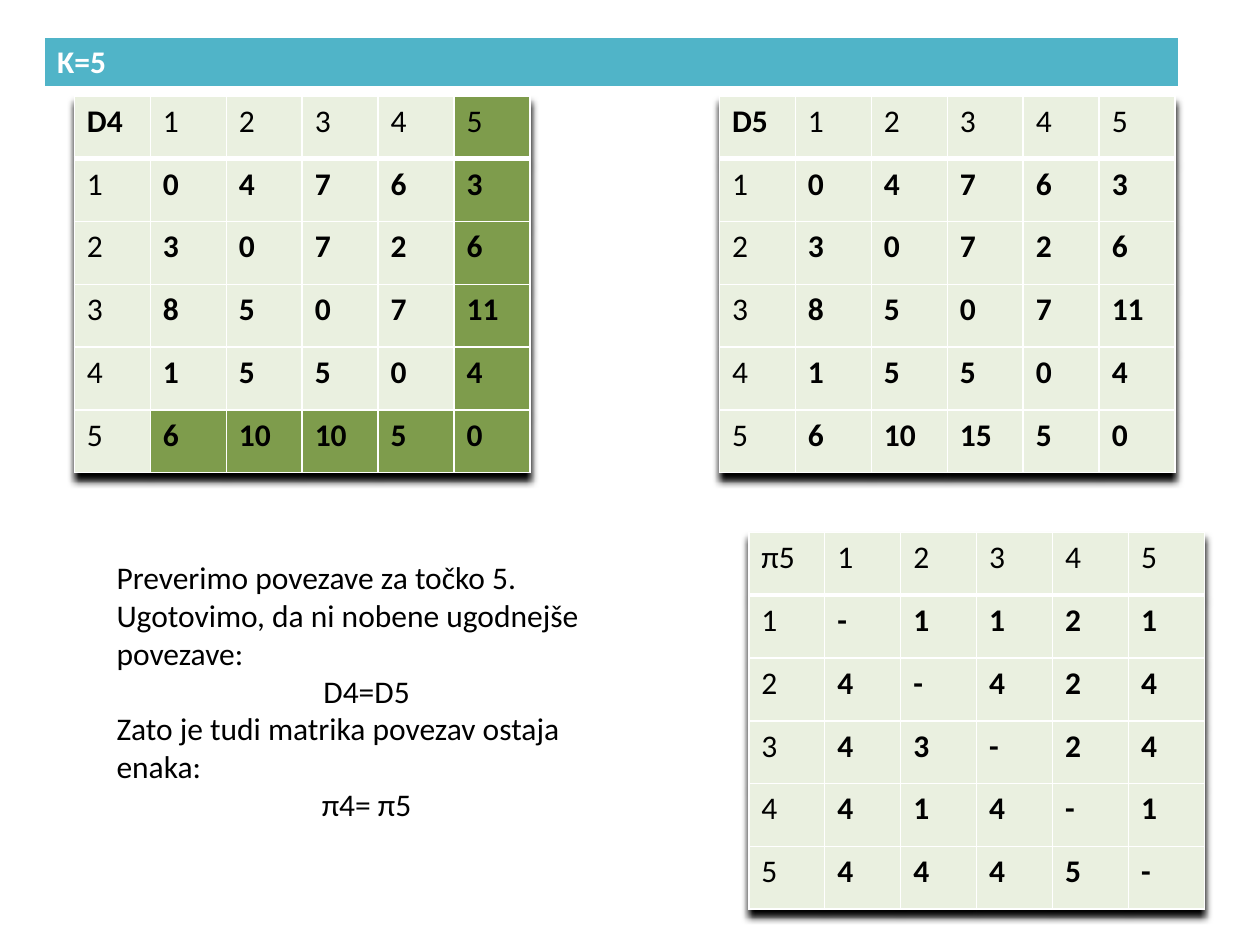
from dataclasses import dataclass

from lxml.etree import SubElement
from pptx import Presentation
from pptx.dml.color import RGBColor
from pptx.enum.text import MSO_AUTO_SIZE as AutoSize, PP_ALIGN as Align
from pptx.oxml import parse_xml
from pptx.oxml.ns import nsdecls, qn
from pptx.util import Pt


@dataclass(frozen=True)
class Theme:
    font: str = "Calibri"
    size: float = 18
    text: str = "000000"
    light: str = "FFFFFF"
    banner: str = "50B4C8"
    cell: str = "EAF0E0"
    marked: str = "7E9C4C"
    rule: float = 1
    header_rule: float = 3


@dataclass(frozen=True)
class Matrix:
    name: str
    left: float
    top: float
    rows: tuple[str, ...]
    bold_name: bool = True
    pivot: int | None = None


THEME = Theme()
COLUMN_WIDTH, ROW_HEIGHT = 43.4, 35.9
MATRICES = (
    Matrix("D5", 411.1, 54.8, ("0 4 7 6 3", "3 0 7 2 6", "8 5 0 7 11", "1 5 5 0 4", "6 10 15 5 0")),
    Matrix("π5", 427.9, 304.2, ("- 1 1 2 1", "4 - 4 2 4", "4 3 - 2 4", "4 1 4 - 1", "4 4 4 5 -"),
           bold_name=False),
    Matrix("D4", 42.5, 54.8, ("0 4 7 6 3", "3 0 7 2 6", "8 5 0 7 11", "1 5 5 0 4", "6 10 10 5 0"),
           pivot=5),
)
NOTES = (
    ("Preverimo povezave za točko 5. Ugotovimo, da ni nobene ugodnejše povezave:", Align.LEFT),
    ("D4=D5", Align.CENTER),
    ("Zato je tudi matrika povezav ostaja enaka:", Align.LEFT),
    ("π4= π5", Align.CENTER),
)


def add_span(para, text: str, color: str, bold: bool = False) -> None:
    span = para.add_run()
    span.text = text
    span.font.name = THEME.font
    span.font.size = Pt(THEME.size)
    span.font.bold = bold
    span.font.color.rgb = RGBColor.from_string(color)


def set_borders(cell, top: float, bottom: float) -> None:
    properties = cell._tc.get_or_add_tcPr()
    for side, width in (("L", THEME.rule), ("R", THEME.rule), ("T", top), ("B", bottom)):
        line = SubElement(properties, qn(f"a:ln{side}"), w=str(Pt(width)))
        fill = SubElement(line, qn("a:solidFill"))
        SubElement(fill, qn("a:srgbClr"), val=THEME.light)


def style_cell(cell, row: int, text: str, fill: str, color: str, bold: bool) -> None:
    set_borders(cell,
                THEME.header_rule if row == 1 else THEME.rule,
                THEME.header_rule if row == 0 else THEME.rule)
    cell.fill.solid()
    cell.fill.fore_color.rgb = RGBColor.from_string(fill)
    add_span(cell.text_frame.paragraphs[0], text, color, bold)


def add_grid(page, rows: int, columns: int, left: float, top: float, width: float, height: float):
    grid = page.shapes.add_table(rows, columns, Pt(left), Pt(top), Pt(width), Pt(height)).table
    grid.first_row = grid.horz_banding = False
    for column in grid.columns:
        column.width = Pt(width / columns)
    for row in grid.rows:
        row.height = Pt(height / rows)
    return grid


def add_shadow(grid) -> None:
    grid._tbl.tblPr.insert(0, parse_xml(
        f'<a:effectLst {nsdecls("a")}>'
        f'<a:outerShdw blurRad="{Pt(4)}" dist="{Pt(4)}" dir="5400000" rotWithShape="0">'
        f'<a:srgbClr val="{THEME.text}"/></a:outerShdw></a:effectLst>'))


def add_banner(page, text: str) -> None:
    grid = add_grid(page, 1, 1, 25.5, 21, 648, 29.2)
    style_cell(grid.cell(0, 0), 0, text, THEME.banner, THEME.light, True)


def add_matrix(page, matrix: Matrix) -> None:
    body = [row.split() for row in matrix.rows]
    count = len(body) + 1
    header = [matrix.name, *map(str, range(1, count))]
    lines = [header, *([str(number), *row] for number, row in enumerate(body, 1))]
    grid = add_grid(page, count, count, matrix.left, matrix.top,
                    count * COLUMN_WIDTH, count * ROW_HEIGHT)
    add_shadow(grid)
    for row, line in enumerate(lines):
        for column, text in enumerate(line):
            marked = column == matrix.pivot or (row == matrix.pivot and column > 0)
            bold = matrix.bold_name if row == column == 0 else row > 0 and column > 0
            style_cell(grid.cell(row, column), row, text,
                       THEME.marked if marked else THEME.cell, THEME.text, bold)


def add_notes(page) -> None:
    box = page.shapes.add_textbox(Pt(59.5), Pt(315.4), Pt(300), Pt(160))
    frame = box.text_frame
    frame.word_wrap = True
    frame.auto_size = AutoSize.SHAPE_TO_FIT_TEXT
    for index, (text, alignment) in enumerate(NOTES):
        para = frame.add_paragraph() if index else frame.paragraphs[0]
        para.alignment = alignment
        add_span(para, text, THEME.text)


def main() -> None:
    """Build the slide for the last step of the shortest-path matrices."""
    deck = Presentation()
    deck.slide_width, deck.slide_height = Pt(720), Pt(540)
    page = deck.slides.add_slide(deck.slide_layouts[6])
    add_banner(page, "K=5")
    for matrix in MATRICES:
        add_matrix(page, matrix)
    add_notes(page)
    deck.save("out.pptx")


if __name__ == "__main__":
    main()
